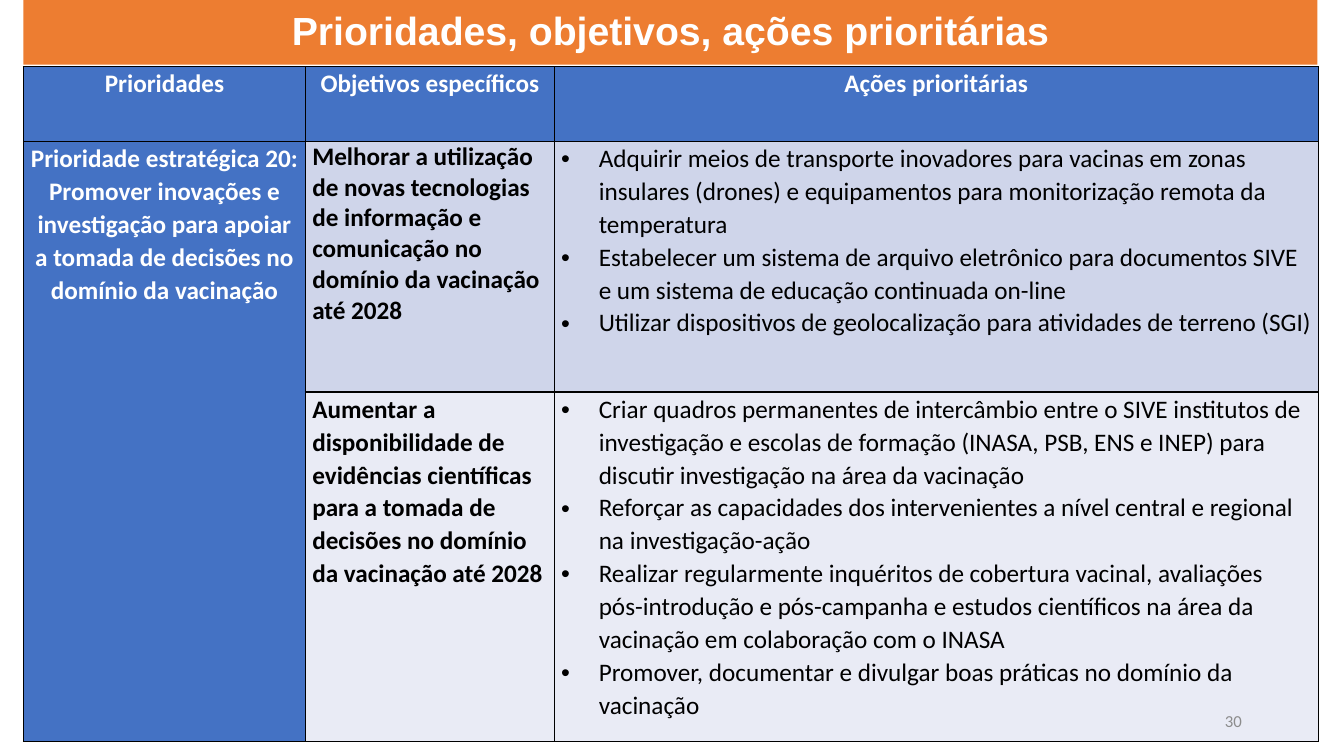
from lxml.etree import SubElement
from pptx import Presentation
from pptx.dml.color import RGBColor
from pptx.enum.text import MSO_ANCHOR, MSO_AUTO_SIZE, PP_ALIGN
from pptx.oxml import parse_xml
from pptx.oxml.ns import nsdecls, qn
from pptx.util import Cm, Pt

COLORS = {
    "orange": "ED7D31", "blue": "4472C4", "band": "CFD5EA", "light": "E9EBF5",
    "white": "FFFFFF", "black": "000000", "gray": "8C8C8C",
}


def style_runs(paragraph, size, color, bold=False, font="Calibri"):
    for run in paragraph.runs:
        run.font.name = font
        run.font.size = Pt(size)
        run.font.bold = bold
        run.font.color.rgb = RGBColor.from_string(COLORS[color])


def frame_cell(cell, fill):
    cell.margin_left = cell.margin_right = Cm(0.17)
    cell.margin_top = cell.margin_bottom = 0
    cell.fill.solid()
    cell.fill.fore_color.rgb = RGBColor.from_string(COLORS[fill])
    properties = cell._tc.get_or_add_tcPr()
    for position, side in enumerate(("lnL", "lnR", "lnT", "lnB")):
        properties.insert(position, parse_xml(
            f'<a:{side} {nsdecls("a")} w="12700"><a:solidFill>'
            f'<a:srgbClr val="{COLORS["black"]}"/></a:solidFill></a:{side}>'))


presentation = Presentation()
presentation.slide_width, presentation.slide_height = Cm(33.87), Cm(19.05)
slide = presentation.slides.add_slide(presentation.slide_layouts[5])

# Title bar
title = slide.shapes.title
title.left, title.top, title.width, title.height = Cm(0.59), 0, Cm(32.61), Cm(1.63)
title.fill.solid()
title.fill.fore_color.rgb = RGBColor.from_string(COLORS["orange"])
title.text_frame.text = "Prioridades, objetivos, ações prioritárias"
title.text_frame.auto_size = MSO_AUTO_SIZE.NONE
title.text_frame.vertical_anchor = MSO_ANCHOR.MIDDLE
heading = title.text_frame.paragraphs[0]
heading.alignment = PP_ALIGN.CENTER
heading.line_spacing = 0.9
style_runs(heading, 28, "white", True, "Arial")

# Table content
headers = ["Prioridades", "Objetivos específicos", "Ações prioritárias"]
priority = ("Prioridade estratégica 20: Promover inovações e investigação para apoiar "
            "a tomada de decisões no domínio da vacinação")
objectives = [
    ("Melhorar a utilização de novas tecnologias de informação e comunicação "
     "no domínio da vacinação até 2028", "band", 1.0, [
         "Adquirir meios de transporte inovadores para vacinas em zonas insulares (drones) "
         "e equipamentos para monitorização remota da temperatura",
         "Estabelecer um sistema de arquivo eletrônico para documentos SIVE "
         "e um sistema de educação continuada on-line",
         "Utilizar dispositivos de geolocalização para atividades de terreno (SGI)",
     ]),
    ("Aumentar a disponibilidade de evidências científicas para a tomada de decisões "
     "no domínio da vacinação até 2028", "light", 1.07, [
         "Criar quadros permanentes de intercâmbio entre o SIVE institutos de investigação "
         "e escolas de formação (INASA, PSB, ENS e INEP) para discutir investigação "
         "na área da vacinação",
         "Reforçar as capacidades dos intervenientes a nível central e regional "
         "na investigação-ação",
         "Realizar regularmente inquéritos de cobertura vacinal, avaliações pós-introdução "
         "e pós-campanha e estudos científicos na área da vacinação em colaboração com o INASA",
         "Promover, documentar e divulgar boas práticas no domínio da vacinação",
     ]),
]

# Table grid
plan = slide.shapes.add_table(3, 3, Cm(0.59), Cm(1.68), Cm(32.63), Cm(17.01)).table
for column, width in zip(plan.columns, (7.11, 6.27, 19.25)):
    column.width = Cm(width)
for row, height in zip(plan.rows, (1.88, 6.32, 8.81)):
    row.height = Cm(height)
plan.cell(1, 0).merge(plan.cell(2, 0))

# Headers and strategic priority
blue_cells = [(0, column, text) for column, text in enumerate(headers)] + [(1, 0, priority)]
for row, column, text in blue_cells:
    cell = plan.cell(row, column)
    frame_cell(cell, "blue")
    cell.text_frame.text = text
    label = cell.text_frame.paragraphs[0]
    label.alignment = PP_ALIGN.CENTER
    label.line_spacing = 1.07
    label.space_after = Pt(8)
    style_runs(label, 18, "white", True)
frame_cell(plan.cell(2, 0), "blue")

# Objectives with their actions
for row, (objective, fill, spacing, actions) in enumerate(objectives, start=1):
    objective_cell, actions_cell = plan.cell(row, 1), plan.cell(row, 2)
    frame_cell(objective_cell, fill)
    frame_cell(actions_cell, fill)
    objective_cell.text_frame.text = objective
    goal = objective_cell.text_frame.paragraphs[0]
    goal.line_spacing = spacing
    style_runs(goal, 18, "black", True)

    actions_cell.text_frame.text = "\n".join(actions)
    for action in actions_cell.text_frame.paragraphs:
        properties = action._p.get_or_add_pPr()
        properties.set("marL", str(Cm(0.95)))
        properties.set("indent", str(-Cm(0.95)))
        SubElement(properties, qn("a:buFont"), typeface="Arial")
        SubElement(properties, qn("a:buChar"), char="•")
        action.line_spacing = 1.07
        style_runs(action, 18, "black")

# Page number
page_number = slide.shapes.add_textbox(Cm(23.93), Cm(17.65), Cm(7.62), Cm(1.02)).text_frame
page_number.word_wrap = True
page_number.vertical_anchor = MSO_ANCHOR.MIDDLE
page_number.text = "30"
page_number.paragraphs[0].alignment = PP_ALIGN.RIGHT
style_runs(page_number.paragraphs[0], 12, "gray")

presentation.save("out.pptx")
